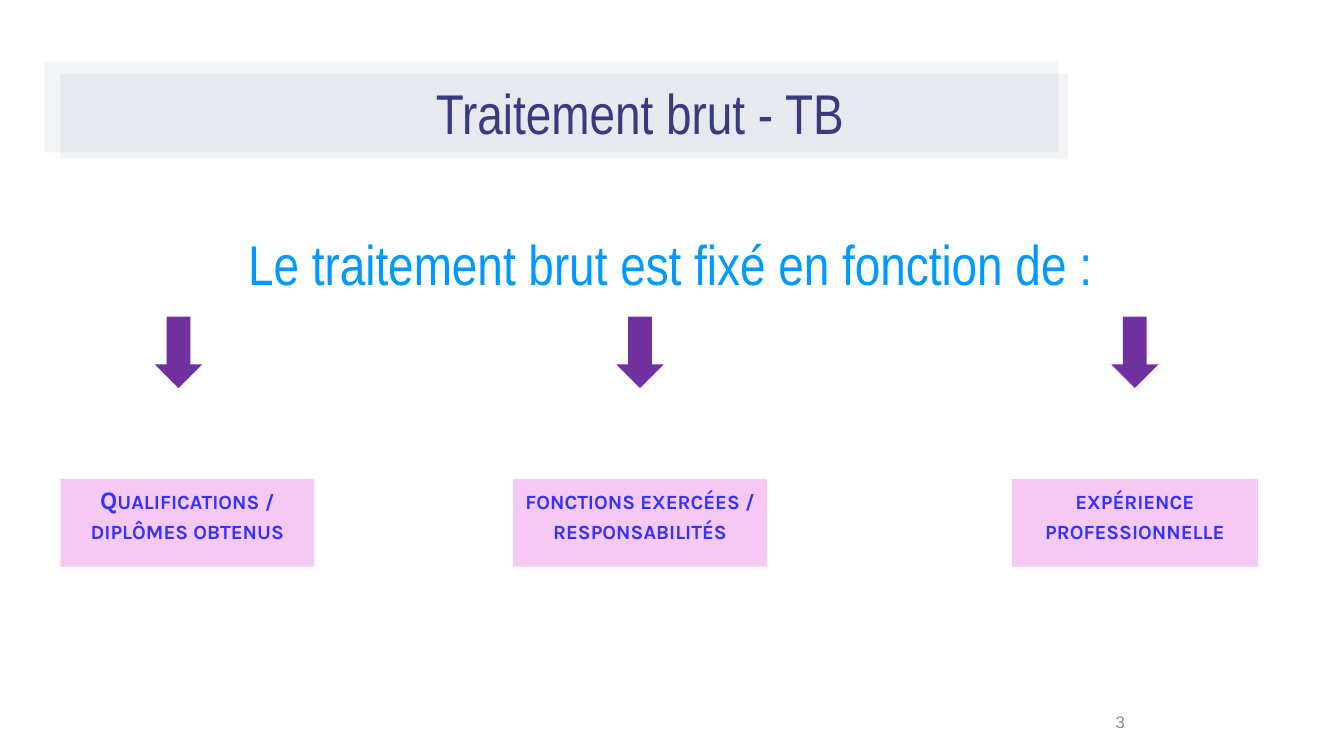
from dataclasses import dataclass

from lxml.etree import SubElement
from pptx import Presentation
from pptx.dml.color import RGBColor
from pptx.enum.shapes import MSO_SHAPE
from pptx.enum.text import MSO_ANCHOR, MSO_AUTO_SIZE, PP_ALIGN
from pptx.oxml.ns import qn
from pptx.shapes.autoshape import Shape
from pptx.slide import Slide
from pptx.util import Cm, Pt

NAVY = RGBColor(0x3A, 0x3A, 0x82)
SKY = RGBColor(0x00, 0x99, 0xFF)
BLUE = RGBColor(0x33, 0x33, 0xFF)
PURPLE = RGBColor(0x70, 0x30, 0xA0)
PINK = RGBColor(0xF5, 0xC9, 0xF4)
SLATE = RGBColor(0x84, 0x97, 0xB0)
GREY = RGBColor(0x8C, 0x8C, 0x8C)

ARROW_TOP, ARROW_WIDTH, ARROW_HEIGHT = 7.98, 1.2, 1.8
FACTOR_TOP, FACTOR_HEIGHT = 12.07, 2.21


@dataclass
class Area:
    left: float
    top: float
    width: float
    height: float

    def lengths(self) -> tuple[Cm, Cm, Cm, Cm]:
        return Cm(self.left), Cm(self.top), Cm(self.width), Cm(self.height)


@dataclass
class TextStyle:
    font: str
    size: float
    color: RGBColor
    align: PP_ALIGN = PP_ALIGN.CENTER
    anchor: MSO_ANCHOR = MSO_ANCHOR.MIDDLE
    spacing: float = 1.0
    small_caps: bool = False


@dataclass
class Factor:
    label: str
    left: float
    width: float
    arrow_center: float


HEADING = TextStyle("Arial Narrow", 40, NAVY, spacing=0.9)
STATEMENT = TextStyle("Arial Narrow", 40, SKY, spacing=0.9)
PAGE_NUMBER = TextStyle("Arial", 12, GREY, align=PP_ALIGN.RIGHT)
FACTOR_LABEL = TextStyle("Karla", 18, BLUE, anchor=MSO_ANCHOR.TOP, small_caps=True)

TITLE_BANDS = [Area(1.12, 1.55, 25.55, 2.29), Area(1.52, 1.85, 25.4, 2.16)]
FACTORS = [
    Factor("Qualifications /\ndiplômes obtenus", 1.52, 6.4, 4.5),
    Factor("fonctions exercées /\nresponsabilités", 12.93, 6.4, 16.13),
    Factor("expérience\nprofessionnelle", 25.5, 6.2, 28.6),
]


def write(shape: Shape, text: str, style: TextStyle) -> None:
    frame = shape.text_frame
    frame.text = text
    frame.word_wrap = True
    frame.auto_size = MSO_AUTO_SIZE.NONE
    frame.vertical_anchor = style.anchor
    for paragraph in frame.paragraphs:
        paragraph.alignment = style.align
        paragraph.line_spacing = style.spacing
        for run in paragraph.runs:
            run.font.name = style.font
            run.font.size = Pt(style.size)
            run.font.color.rgb = style.color
            if style.small_caps:
                run.font.bold = True
                run.font._element.set("cap", "small")


def add_block(slide: Slide, kind: MSO_SHAPE, area: Area, color: RGBColor) -> Shape:
    block = slide.shapes.add_shape(kind, *area.lengths())
    block.shadow.inherit = False
    block.fill.solid()
    block.fill.fore_color.rgb = color
    block.line.fill.background()
    return block


def add_title(slide: Slide) -> None:
    for area in TITLE_BANDS:
        band = add_block(slide, MSO_SHAPE.RECTANGLE, area, SLATE)
        tint = band.element.spPr.find(qn("a:solidFill"))[0]
        SubElement(tint, qn("a:alpha"), val="10000")
    title = slide.shapes.title
    title.left, title.top, title.width, title.height = Area(1.52, 1.09, 29.21, 3.68).lengths()
    write(title, "Traitement brut - TB", HEADING)
    title.element.getparent().append(title.element)


def add_text(slide: Slide, area: Area, text: str, style: TextStyle) -> None:
    write(slide.shapes.add_textbox(*area.lengths()), text, style)


def add_factor(slide: Slide, factor: Factor) -> None:
    arrow = Area(factor.arrow_center - ARROW_WIDTH / 2, ARROW_TOP, ARROW_WIDTH, ARROW_HEIGHT)
    add_block(slide, MSO_SHAPE.DOWN_ARROW, arrow, PURPLE)
    area = Area(factor.left, FACTOR_TOP, factor.width, FACTOR_HEIGHT)
    card = add_block(slide, MSO_SHAPE.RECTANGLE, area, PINK)
    write(card, factor.label, FACTOR_LABEL)


def main() -> None:
    presentation = Presentation()
    presentation.slide_width, presentation.slide_height = Cm(33.87), Cm(19.05)
    slide = presentation.slides.add_slide(presentation.slide_layouts[5])
    add_title(slide)
    add_text(slide, Area(1.27, 5.8, 31.24, 1.9),
             "Le traitement brut est fixé en fonction de :", STATEMENT)
    add_text(slide, Area(20.98, 17.68, 7.62, 1.02), "3", PAGE_NUMBER)
    for factor in FACTORS:
        add_factor(slide, factor)
    presentation.save("out.pptx")


if __name__ == "__main__":
    main()
